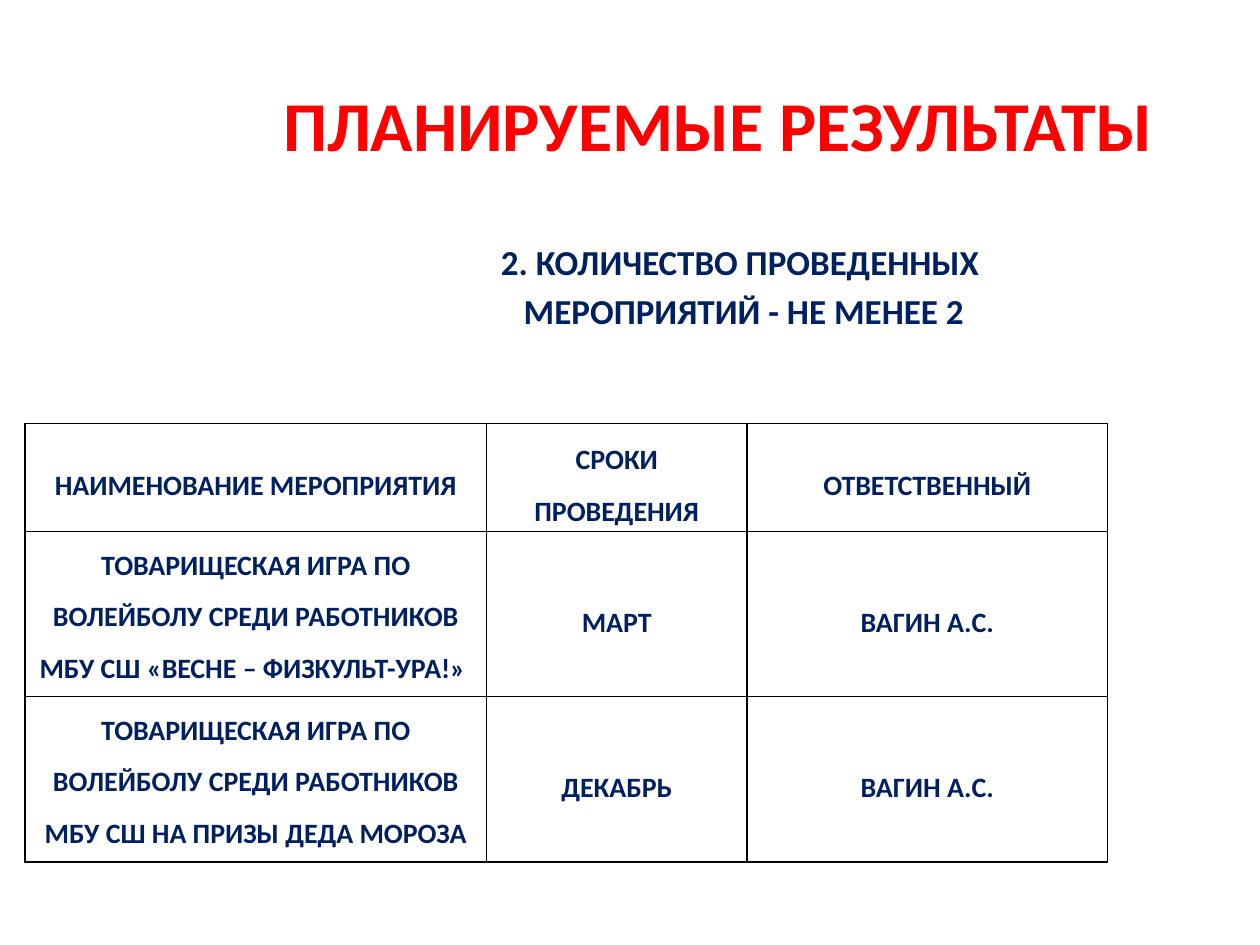
from pptx import Presentation
from pptx.dml.color import RGBColor
from pptx.enum.text import MSO_ANCHOR, MSO_AUTO_SIZE, PP_ALIGN
from pptx.oxml import parse_xml
from pptx.oxml.ns import nsdecls
from pptx.util import Inches, Pt

RED = "FF0000"
NAVY = "002060"
BLACK = "000000"

COLUMN_WIDTHS = [3.66, 2.07, 2.86]
ROW_HEIGHTS = [0.86, 1.31, 1.31]
EVENTS = [
    ["НАИМЕНОВАНИЕ МЕРОПРИЯТИЯ", "СРОКИ ПРОВЕДЕНИЯ", "ОТВЕТСТВЕННЫЙ"],
    ["ТОВАРИЩЕСКАЯ ИГРА ПО ВОЛЕЙБОЛУ СРЕДИ РАБОТНИКОВ МБУ СШ «ВЕСНЕ – ФИЗКУЛЬТ-УРА!» ",
     "МАРТ", "ВАГИН А.С."],
    ["ТОВАРИЩЕСКАЯ ИГРА ПО ВОЛЕЙБОЛУ СРЕДИ РАБОТНИКОВ МБУ СШ НА ПРИЗЫ ДЕДА МОРОЗА",
     "ДЕКАБРЬ", "ВАГИН А.С."],
]


def color(hex_string):
    return RGBColor.from_string(hex_string)


def write_text(text_frame, lines, size, font_color=NAVY, line_spacing=1.0, space_before=0):
    """Write one bold centred paragraph per line; space_before skips the first."""
    text_frame.word_wrap = True
    for index, line in enumerate(lines):
        paragraph = text_frame.add_paragraph() if index else text_frame.paragraphs[0]
        paragraph.alignment = PP_ALIGN.CENTER
        paragraph.line_spacing = line_spacing
        paragraph.space_before = Pt(space_before if index else 0)
        run = paragraph.add_run()
        run.text = line
        run.font.name = "Calibri"
        run.font.size = Pt(size)
        run.font.bold = True
        run.font.color.rgb = color(font_color)


def add_title(slide, text):
    title = slide.shapes.title
    title.left, title.top = Inches(1.22), Inches(0.6)
    title.width, title.height = Inches(8.95), Inches(0.94)
    title.text_frame.auto_size = MSO_AUTO_SIZE.NONE
    title.text_frame.vertical_anchor = MSO_ANCHOR.TOP
    write_text(title.text_frame, [text], size=40, font_color=RED)


def add_target(slide, lines):
    box = slide.shapes.add_textbox(Inches(1.93), Inches(1.86), Inches(7.95), Inches(1.26))
    write_text(box.text_frame, lines, size=20, space_before=4)


def set_borders(cell, line_color=BLACK, width=1):
    properties = cell._tc.get_or_add_tcPr()
    for index, side in enumerate(("lnL", "lnR", "lnT", "lnB")):
        properties.insert(index, parse_xml(
            f'<a:{side} {nsdecls("a")} w="{Pt(width)}"><a:solidFill>'
            f'<a:srgbClr val="{line_color}"/></a:solidFill></a:{side}>'))


def format_cell(cell, text, anchor):
    cell.margin_left = cell.margin_right = Inches(0.07)
    cell.margin_top = cell.margin_bottom = 0
    cell.vertical_anchor = anchor
    cell.fill.background()
    set_borders(cell)
    write_text(cell.text_frame, [text], size=16, line_spacing=1.5)


def add_events_table(slide, rows):
    table = slide.shapes.add_table(
        len(rows), len(COLUMN_WIDTHS), Inches(0.2), Inches(3.36),
        Inches(sum(COLUMN_WIDTHS)), Inches(sum(ROW_HEIGHTS))).table
    table.horz_banding = False
    table.first_row = False
    for column, width in zip(table.columns, COLUMN_WIDTHS):
        column.width = Inches(width)
    for row, height in zip(table.rows, ROW_HEIGHTS):
        row.height = Inches(height)
    for row_index, row in enumerate(rows):
        for column_index, text in enumerate(row):
            is_event_name = row_index > 0 and column_index == 0
            anchor = MSO_ANCHOR.TOP if is_event_name else MSO_ANCHOR.MIDDLE
            format_cell(table.cell(row_index, column_index), text, anchor)


def main():
    presentation = Presentation()
    presentation.slide_width, presentation.slide_height = Inches(10), Inches(7.5)
    slide = presentation.slides.add_slide(presentation.slide_layouts.get_by_name("Title Only"))
    add_title(slide, "ПЛАНИРУЕМЫЕ РЕЗУЛЬТАТЫ")
    add_target(slide, ["2. КОЛИЧЕСТВО ПРОВЕДЕННЫХ ", "МЕРОПРИЯТИЙ - НЕ МЕНЕЕ 2"])
    add_events_table(slide, EVENTS)
    presentation.save("out.pptx")


if __name__ == "__main__":
    main()
